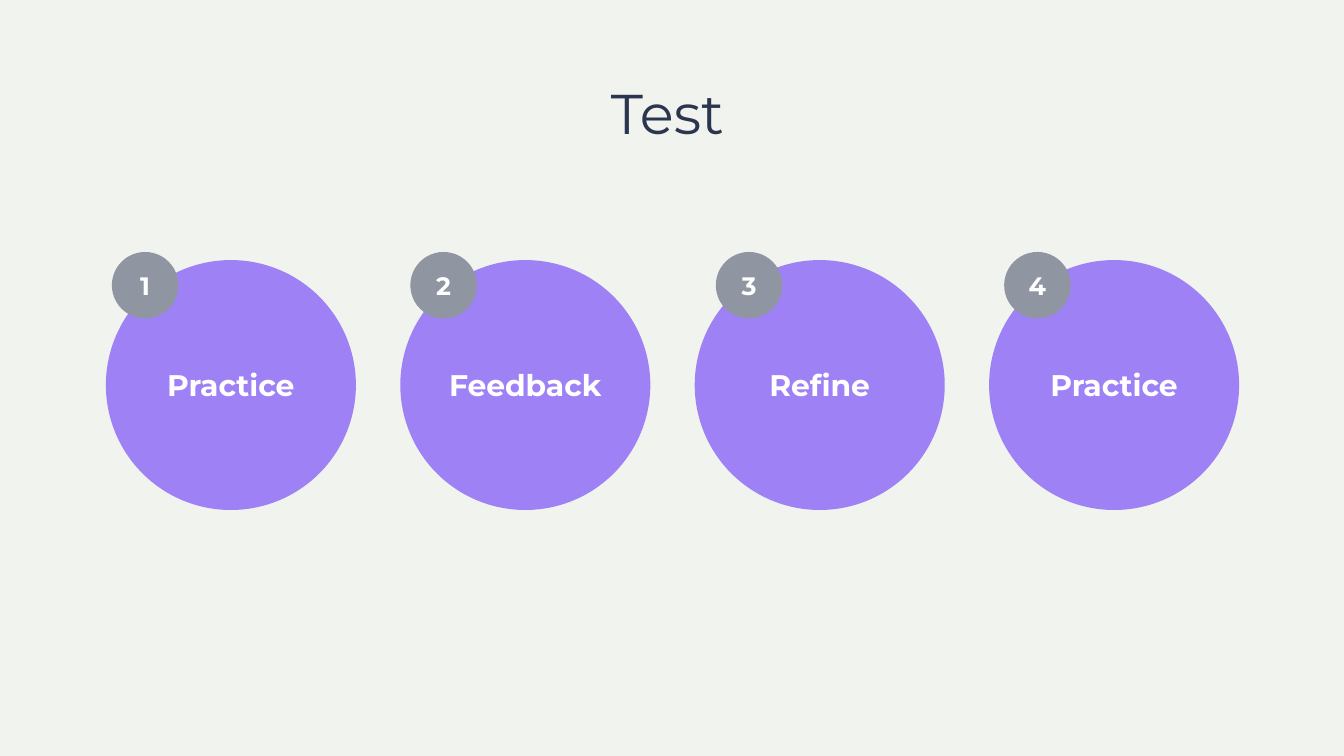
from dataclasses import dataclass

import pptx
import pptx.dml.color
import pptx.enum.shapes
import pptx.enum.text
import pptx.util

# Slide and column grid, in inches
SLIDE_W, SLIDE_H = 13.33, 7.5
GRID_LEFT, COLUMN_PITCH = 1.05, 2.92
CIRCLE_TOP, CIRCLE_SIZE = 2.58, 2.48
BADGE_TOP, BADGE_SIZE = 2.5, 0.66

BACKGROUND, NAVY, PURPLE, GREY, WHITE = "F0F3EE", "2B354F", "9F81F6", "9095A2", "FFFFFF"


@dataclass
class Step:
    label: str
    badge_shift: float  # from the left edge of the column


STEPS = [
    Step("Practice", 0.06),
    Step("Feedback", 0.10),
    Step("Refine", 0.21),
    Step("Practice", 0.15),
]


def rgb(value: str) -> pptx.dml.color.RGBColor:
    return pptx.dml.color.RGBColor.from_string(value)


def write(sp, text: str, size: float, color: str, bold: bool = False,
          wrap: bool = True, margins: tuple = (0, 0, 0, 0)) -> None:
    """Put one centred line of text in a shape."""
    tf = sp.text_frame
    left, top, right, bottom = map(pptx.util.Inches, margins)
    frame_format = {
        "margin_left": left, "margin_top": top,
        "margin_right": right, "margin_bottom": bottom,
        "word_wrap": wrap, "vertical_anchor": pptx.enum.text.MSO_ANCHOR.MIDDLE,
    }
    for name, value in frame_format.items():
        setattr(tf, name, value)
    p = tf.paragraphs[0]
    p.alignment = pptx.enum.text.PP_ALIGN.CENTER
    r = p.add_run()
    r.text = text
    for name, value in {"name": "Montserrat", "size": pptx.util.Pt(size), "bold": bold}.items():
        setattr(r.font, name, value)
    r.font.color.rgb = rgb(color)


def add_circle(s, left: float, top: float, size: float, fill: str):
    sp = s.shapes.add_shape(pptx.enum.shapes.MSO_SHAPE.OVAL,
                            *map(pptx.util.Inches, (left, top, size, size)))
    sp.shadow.inherit = False
    sp.fill.solid()
    sp.fill.fore_color.rgb = rgb(fill)
    sp.line.fill.background()
    return sp


def main() -> None:
    prs = pptx.Presentation()
    prs.slide_width = pptx.util.Inches(SLIDE_W)
    prs.slide_height = pptx.util.Inches(SLIDE_H)
    s = prs.slides.add_slide(prs.slide_layouts[6])
    s.background.fill.solid()
    s.background.fill.fore_color.rgb = rgb(BACKGROUND)

    # Title
    title = s.shapes.add_textbox(*map(pptx.util.Inches, (0, 0.74, SLIDE_W, 0.83)))
    write(title, "Test", 40, NAVY, margins=(0, 0.04, 0.09, 0.04))
    title.text_frame.paragraphs[0].line_spacing = 0.9

    # Step circles
    columns = [GRID_LEFT + i * COLUMN_PITCH for i in range(len(STEPS))]
    for left, step in zip(columns, STEPS):
        circle = add_circle(s, left, CIRCLE_TOP, CIRCLE_SIZE, PURPLE)
        write(circle, step.label, 21.3, WHITE, bold=True, wrap=False)

    # Number badges
    for number, (left, step) in enumerate(zip(columns, STEPS), start=1):
        badge = add_circle(s, left + step.badge_shift, BADGE_TOP, BADGE_SIZE, GREY)
        write(badge, str(number), 18, WHITE, bold=True)

    prs.save("out.pptx")


if __name__ == "__main__":
    main()
